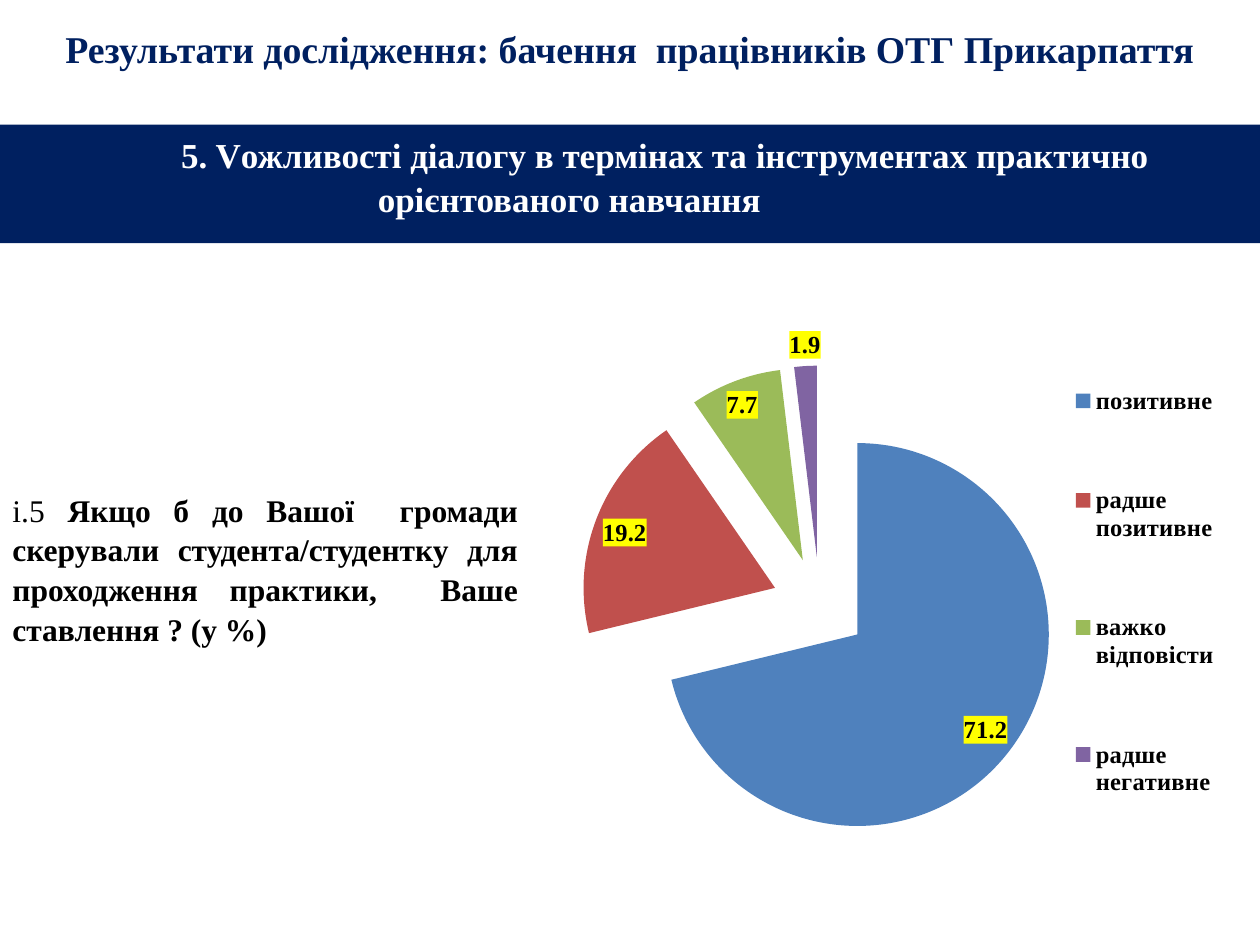
import pptx
import pptx.chart.data
import pptx.dml.color
import pptx.enum.chart
import pptx.enum.shapes
import pptx.enum.text
import pptx.oxml
import pptx.util

Inches = pptx.util.Inches
Pt = pptx.util.Pt
RGBColor = pptx.dml.color.RGBColor
Align = pptx.enum.text.PP_ALIGN
Anchor = pptx.enum.text.MSO_ANCHOR

NAVY = RGBColor(0x00, 0x20, 0x60)
WHITE = RGBColor(0xFF, 0xFF, 0xFF)
BLACK = RGBColor(0x00, 0x00, 0x00)
BLUE = RGBColor(0x4F, 0x81, 0xBD)
RED = RGBColor(0xC0, 0x50, 0x4D)
GREEN = RGBColor(0x9B, 0xBB, 0x59)
PURPLE = RGBColor(0x80, 0x64, 0xA2)
FONT = "Times New Roman"
CHART_NS = 'xmlns:c="http://schemas.openxmlformats.org/drawingml/2006/chart"'
DRAWING_NS = 'xmlns:a="http://schemas.openxmlformats.org/drawingml/2006/main"'

ANSWERS = {
    "позитивне": (71.2, BLUE),
    "радше позитивне": (19.2, RED),
    "важко відповісти": (7.7, GREEN),
    "радше негативне": (1.9, PURPLE),
}


def style_font(font, size, color, bold):
    """Give a font the deck's typeface with the size, colour and weight."""
    font.name = FONT
    font.size = Pt(size)
    font.bold = bold
    font.color.rgb = color


def write_text(shape, *runs, size, color=BLACK, align=Align.LEFT, anchor=Anchor.TOP,
               spacing=1.0, before=0):
    """Fill a shape with one paragraph of (text, bold) runs."""
    frame = shape.text_frame
    frame.word_wrap = True
    frame.vertical_anchor = anchor
    paragraph = frame.paragraphs[0]
    paragraph.alignment = align
    paragraph.line_spacing = spacing
    paragraph.space_before = Pt(before)
    for text, bold in runs:
        run = paragraph.add_run()
        run.text = text
        style_font(run.font, size, color, bold)
    return paragraph


def add_title(slide, left, top, width, height):
    """Place the slide title."""
    title = slide.shapes.add_textbox(left, top, width, height)
    write_text(title, ("Результати дослідження: бачення  працівників ОТГ Прикарпаття", True),
               size=21.6, color=NAVY, align=Align.CENTER, anchor=Anchor.MIDDLE)


def add_heading_band(slide, left, top, width, height):
    """Place the navy band with the section heading."""
    band = slide.shapes.add_shape(
        pptx.enum.shapes.MSO_SHAPE.RECTANGLE, left, top, width, height)
    band.shadow.inherit = False
    band.fill.solid()
    band.fill.fore_color.rgb = NAVY
    band.line.fill.background()
    heading = write_text(
        band, ("5. Vожливості діалогу в термінах та інструментах практично "
               "орієнтованого навчання", True),
        size=20, color=WHITE, spacing=1.05, before=4)
    properties = heading._p.get_or_add_pPr()
    properties.set("marL", str(Inches(2.9)))
    properties.set("indent", str(Inches(-1.56)))


def add_question(slide, left, top, width, height):
    """Place the survey question."""
    question = slide.shapes.add_textbox(left, top, width, height)
    write_text(question, ("i.5 ", False),
               ("Якщо б до Вашої  громади скерували студента/студентку для "
                "проходження практики,  Ваше ставлення ? (y %)", True),
               size=18, align=Align.JUSTIFY, spacing=1.05)


def make_layout(x, y, width, height, inner=False):
    """Return a manual chart layout in fractions of the chart area."""
    target = '<c:layoutTarget val="inner"/>' if inner else ""
    return pptx.oxml.parse_xml(
        f'<c:layout {CHART_NS}><c:manualLayout>{target}'
        '<c:xMode val="edge"/><c:yMode val="edge"/>'
        f'<c:x val="{x}"/><c:y val="{y}"/><c:w val="{width}"/><c:h val="{height}"/>'
        '</c:manualLayout></c:layout>')


def style_labels(plot):
    """Show bold values on yellow."""
    plot.has_data_labels = True
    labels = plot.data_labels
    labels.show_value = True
    labels.show_percentage = False
    labels.number_format = "####.0"
    labels.number_format_is_linked = False
    labels.position = pptx.enum.chart.XL_LABEL_POSITION.BEST_FIT
    style_font(labels.font, 14, BLACK, True)
    labels._element.find("{*}txPr").addprevious(pptx.oxml.parse_xml(
        f'<c:spPr {CHART_NS} {DRAWING_NS}><a:solidFill><a:srgbClr val="FFFF00"/>'
        '</a:solidFill></c:spPr>'))


def add_answers_pie(slide, left, top, width, height):
    """Place the exploded pie of answers with its legend."""
    data = pptx.chart.data.CategoryChartData(number_format="####.0")
    data.categories = list(ANSWERS)
    data.add_series("Series 1", [value for value, _ in ANSWERS.values()])
    chart = slide.shapes.add_chart(
        pptx.enum.chart.XL_CHART_TYPE.PIE_EXPLODED, left, top, width, height, data).chart
    chart.has_title = False
    chart.font.name = "Calibri"
    chart.font.size = Pt(10)
    chart.font.color.rgb = BLACK
    plot = chart.plots[0]
    plot.vary_by_categories = True
    pie = plot.series[0]
    for index, (_, color) in enumerate(ANSWERS.values()):
        fill = pie.points[index].format.fill
        fill.solid()
        fill.fore_color.rgb = color
    for old in pie._element.findall("{*}explosion"):
        pie._element.remove(old)
    explosion = pptx.oxml.parse_xml(f'<c:explosion {CHART_NS} val="25"/>')
    pie._element.find("{*}dPt").addprevious(explosion)
    for point in pie._element.findall("{*}dPt"):
        point.find("{*}spPr").addprevious(
            pptx.oxml.parse_xml(f'<c:explosion {CHART_NS} val="25"/>'))
    style_labels(plot)
    chart.has_legend = True
    legend = chart.legend
    legend.position = pptx.enum.chart.XL_LEGEND_POSITION.RIGHT
    legend.include_in_layout = False
    style_font(legend.font, 14, BLACK, True)
    for old in legend._element.findall("{*}layout"):
        legend._element.remove(old)
    legend._element.find("{*}legendPos").addnext(make_layout(0.74, 0.09, 0.24, 0.82))
    plot_area = chart._chartSpace.chart.plotArea
    for old in plot_area.findall("{*}layout"):
        plot_area.remove(old)
    plot_area.insert(0, make_layout(0.07, 0.04, 0.67, 0.96, inner=True))


def main():
    """Build the slide and save it."""
    deck = pptx.Presentation()
    deck.slide_width = Inches(10)
    deck.slide_height = Inches(7.5)
    slide = deck.slides.add_slide(deck.slide_layouts[6])
    add_title(slide, Inches(0), Inches(0.01), Inches(10), Inches(0.75))
    add_heading_band(slide, Inches(0), Inches(0.99), Inches(10), Inches(0.94))
    add_question(slide, Inches(0), Inches(3.83), Inches(4.21), Inches(1.3))
    add_answers_pie(slide, Inches(4.21), Inches(2.02), Inches(5.67), Inches(5.35))
    deck.save("out.pptx")


if __name__ == "__main__":
    main()
